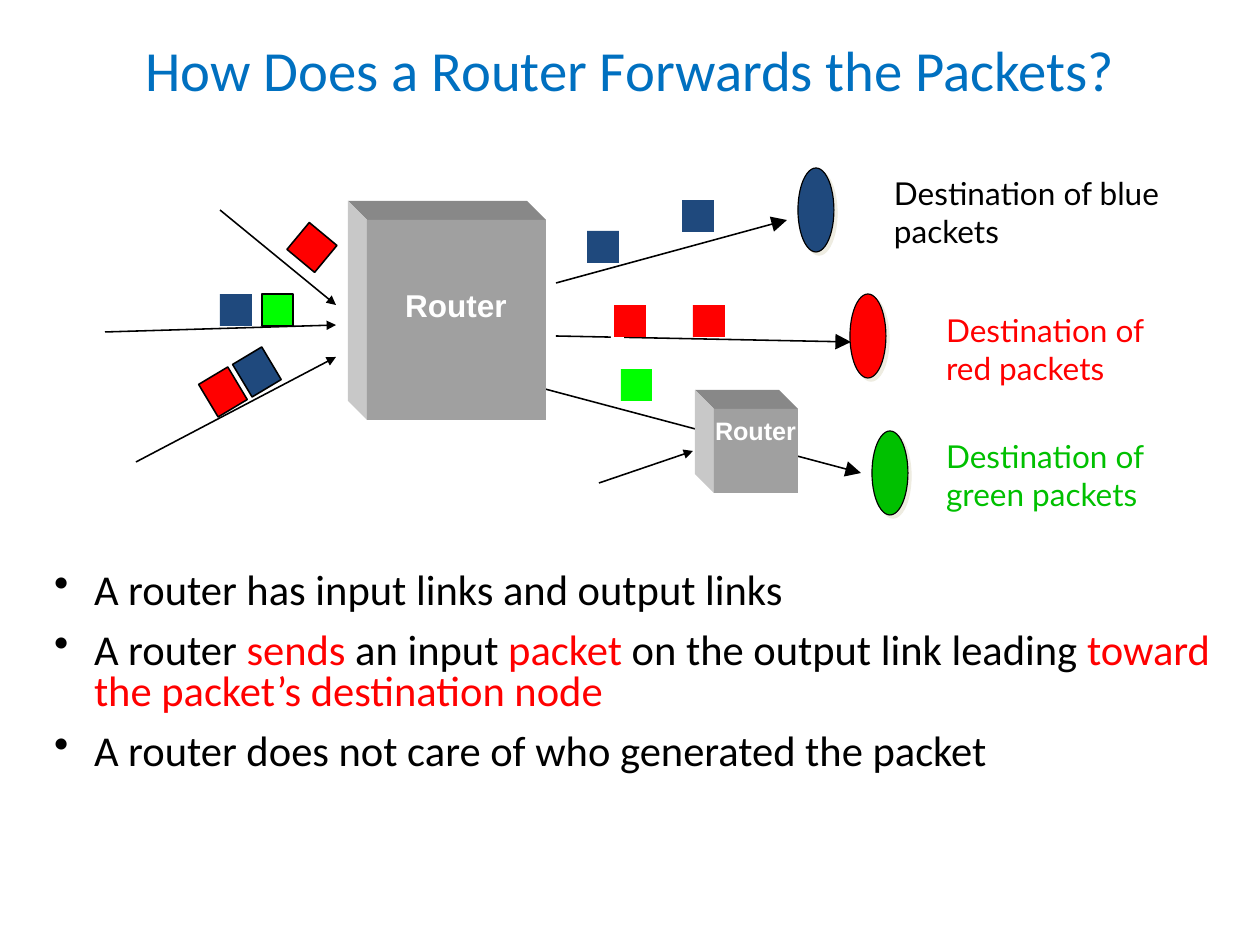
from lxml.etree import SubElement
from pptx import Presentation
from pptx.dml.color import RGBColor
from pptx.enum.shapes import MSO_CONNECTOR, MSO_SHAPE
from pptx.enum.text import MSO_ANCHOR, PP_ALIGN
from pptx.oxml.ns import qn
from pptx.util import Pt

PX = 8064
HUES = {
    "title": "0070C0", "black": "000000", "white": "FFFFFF",
    "blue": "1F497D", "red": "FF0000", "lime": "00FF00", "green": "00C000",
    "front": "A0A0A0", "top": "888888", "side": "C8C8C8", "shade": "EEECE1",
}
# left, top, width, height, turn, colour, outlined
PACKETS = [
    (294, 230, 36, 35, 39.7, "red", True),
    (220, 294, 32, 32, 0, "blue", False),
    (262, 294, 31, 32, 0, "lime", True),
    (240, 353, 34, 38, 329.1, "blue", True),
    (206, 373, 34, 38, 329.1, "red", True),
    (587, 231, 32, 32, 0, "blue", False),
    (682, 200, 32, 32, 0, "blue", False),
    (614, 305, 32, 32, 0, "red", False),
    (693, 305, 32, 32, 0, "red", False),
    (621, 369, 31, 32, 0, "lime", False),
]
INPUTS = [(220, 210, 336, 305), (105, 332, 336, 325),
          (136, 462, 336, 357), (599, 483, 693, 451)]
OUTPUTS = [(556, 283, 787, 220), (556, 336, 851, 342), (545, 389, 861, 473)]
NODES = [(798, 168, "blue"), (850, 294, "red"), (872, 431, "green")]
LABELS = [
    (882, 168, 294, "Destination of blue packets", "black"),
    (934, 305, 262, "Destination of red packets", "red"),
    (934, 431, 273, "Destination of green packets", "green"),
]
POINTS = [
    [("A router has input links and output links", "black")],
    [("A router ", "black"), ("sends", "red"), (" an input ", "black"),
     ("packet", "red"), (" on the output link leading ", "black"),
     ("toward the packet’s destination node", "red")],
    [("A router does not care of who generated the packet", "black")],
]


def emu(*px):
    return [round(n * PX) for n in px]


def hue(name):
    return RGBColor.from_string(HUES[name])


def paint(shape, fill, line=0):
    """Fill a shape; a line width of 0 means no outline."""
    shape.shadow.inherit = False
    shape.fill.solid()
    shape.fill.fore_color.rgb = hue(fill)
    if line:
        shape.line.color.rgb = hue("black")
        shape.line.width = Pt(line)
    else:
        shape.line.fill.background()


def add_box(slide, kind, box, fill, line=0):
    shape = slide.shapes.add_shape(kind, *emu(*box))
    paint(shape, fill, line)
    return shape


def add_face(slide, spots, fill):
    (x, y), *rest = spots
    pen = slide.shapes.build_freeform(x, y, scale=PX)
    pen.add_line_segments(rest)
    paint(pen.convert_to_shape(), fill)


def add_router(slide, x, y, wide, high, size, drop):
    """Draw a cube whose front face starts at x, y; drop lowers its name."""
    deep = 19
    left, top, right, base = x - deep, y - deep, x + wide, y + high
    add_face(slide, [(left, top), (right - deep, top), (right, y), (x, y)], "top")
    add_face(slide, [(left, top), (x, y), (x, base), (left, base - deep)], "side")
    add_box(slide, MSO_SHAPE.RECTANGLE, (x, y, wide, high), "front")
    frame = add_text(slide, (x + wide / 2 - 74, y + drop, 147, 46))
    para = frame.paragraphs[0]
    para.text = "Router"
    para.alignment = PP_ALIGN.CENTER
    style(para, "Arial", size, "white")
    para.font.bold = True


def add_link(slide, ends, head):
    line = slide.shapes.add_connector(MSO_CONNECTOR.STRAIGHT, *emu(*ends))
    line.line.color.rgb = hue("black")
    line.line.width = Pt(1)
    SubElement(line.line._get_or_add_ln(), qn("a:tailEnd"),
               type="triangle", w=head, len=head)
    SubElement(line._element.spPr, qn("a:effectLst"))


def add_node(slide, x, y, fill):
    node = add_box(slide, MSO_SHAPE.OVAL, (x, y, 36, 84), fill, 0.75)
    glow = node._element.spPr.find(qn("a:effectLst"))
    cast = SubElement(glow, qn("a:outerShdw"), dist=str(Pt(2.8)),
                      dir="2700000", algn="ctr", rotWithShape="0")
    SubElement(cast, qn("a:srgbClr"), val=HUES["shade"])


def add_text(slide, box):
    frame = slide.shapes.add_textbox(*emu(*box)).text_frame
    frame.word_wrap = True
    frame.margin_left, frame.margin_right = emu(12, 12)
    frame.margin_top, frame.margin_bottom = emu(6, 6)
    return frame


def style(para, face, size, color=None):
    para.font.name = face
    para.font.size = Pt(size)
    if color:
        para.font.color.rgb = hue(color)


def add_title(slide, text):
    frame = add_text(slide, (0, -10, 1260, 158))
    frame.vertical_anchor = MSO_ANCHOR.MIDDLE
    para = frame.paragraphs[0]
    para.text = text
    para.alignment = PP_ALIGN.CENTER
    style(para, "Calibri", 36, "title")


def add_label(slide, x, y, wide, text, color):
    para = add_text(slide, (x, y, wide, 90)).paragraphs[0]
    para.text = text
    style(para, "Lato", 20, color)


def add_points(slide, points):
    frame = add_text(slide, (42, 567, 1197, 294))
    for i, runs in enumerate(points):
        para = frame.add_paragraph() if i else frame.paragraphs[0]
        style(para, "Calibri", 27)
        para.line_spacing = 0.8
        para.space_before = Pt(5.4)
        para.space_after = Pt(6.7)
        props = para._p.get_or_add_pPr()
        dent = 40 * PX
        props.set("marL", str(dent))
        props.set("indent", str(-dent))
        mark = props.makeelement(qn("a:buChar"), {"char": "•"})
        props.find(qn("a:defRPr")).addprevious(mark)
        for text, color in runs:
            run = para.add_run()
            run.text = text
            run.font.color.rgb = hue(color)


def main():
    deck = Presentation()
    deck.slide_width, deck.slide_height = emu(1260, 945)
    slide = deck.slides.add_slide(deck.slide_layouts[6])
    add_title(slide, "How Does a Router Forwards the Packets?")
    for ends in INPUTS:
        add_link(slide, ends, "med")
    for ends in OUTPUTS:
        add_link(slide, ends, "lg")
    add_box(slide, MSO_SHAPE.RECTANGLE, (611, 303, 13, 59), "white")
    add_router(slide, 367, 220, 179, 200, 20, 60)
    add_router(slide, 714, 409, 84, 84, 16, 0)
    for *box, turn, fill, edge in PACKETS:
        add_box(slide, MSO_SHAPE.RECTANGLE, box, fill, int(edge)).rotation = turn
    for node in NODES:
        add_node(slide, *node)
    for label in LABELS:
        add_label(slide, *label)
    add_points(slide, POINTS)
    deck.save("out.pptx")


if __name__ == "__main__":
    main()
